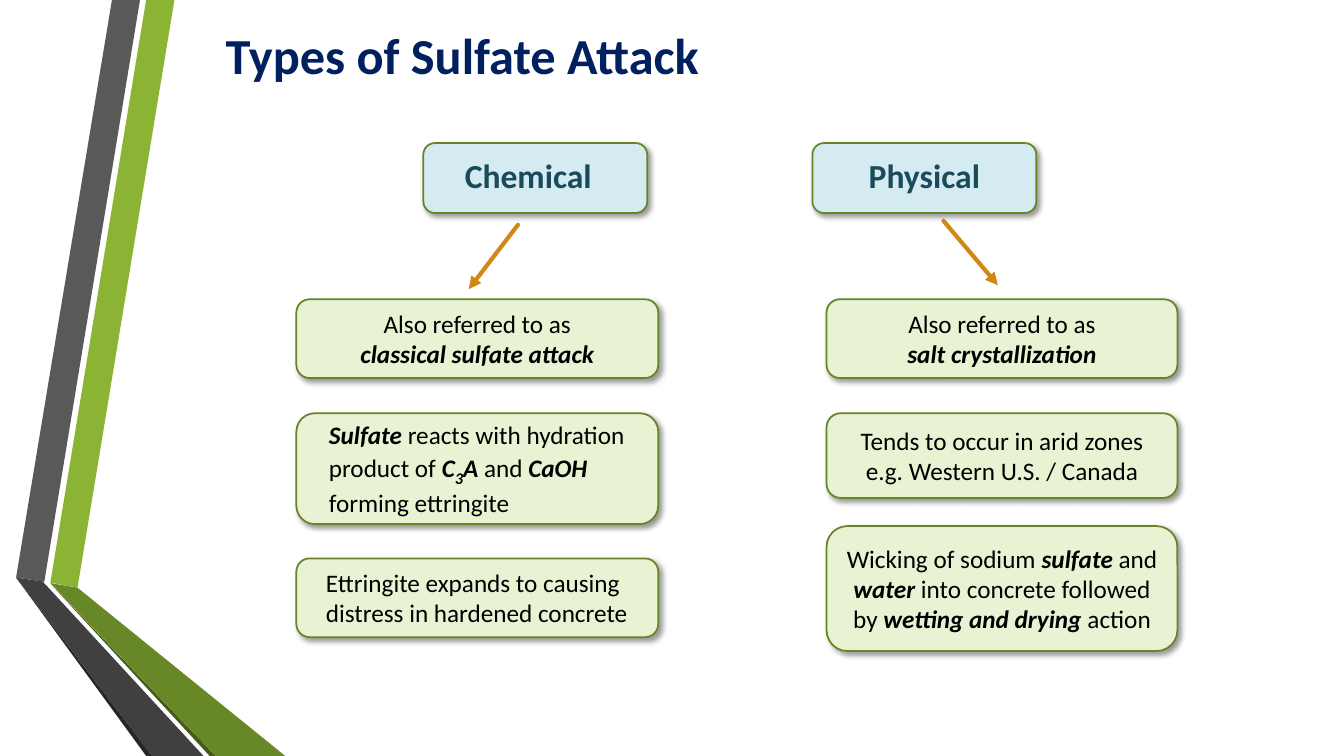
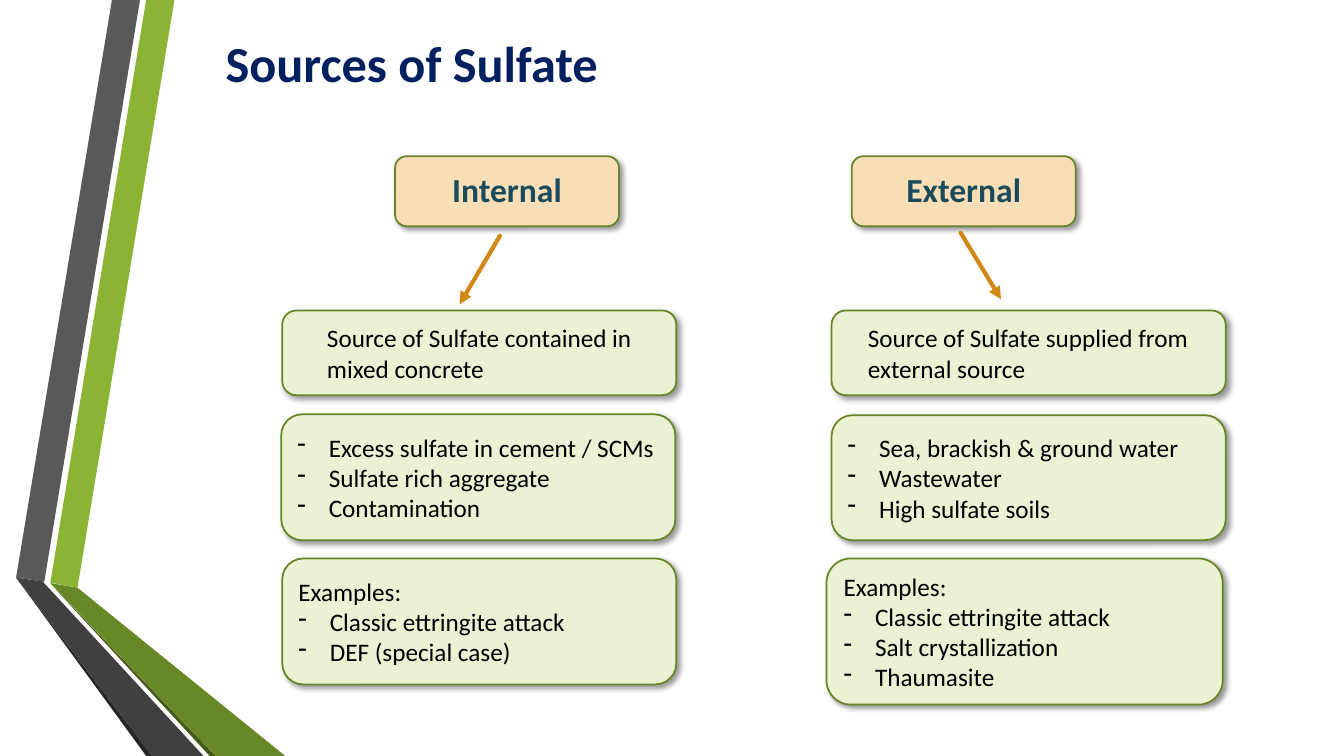
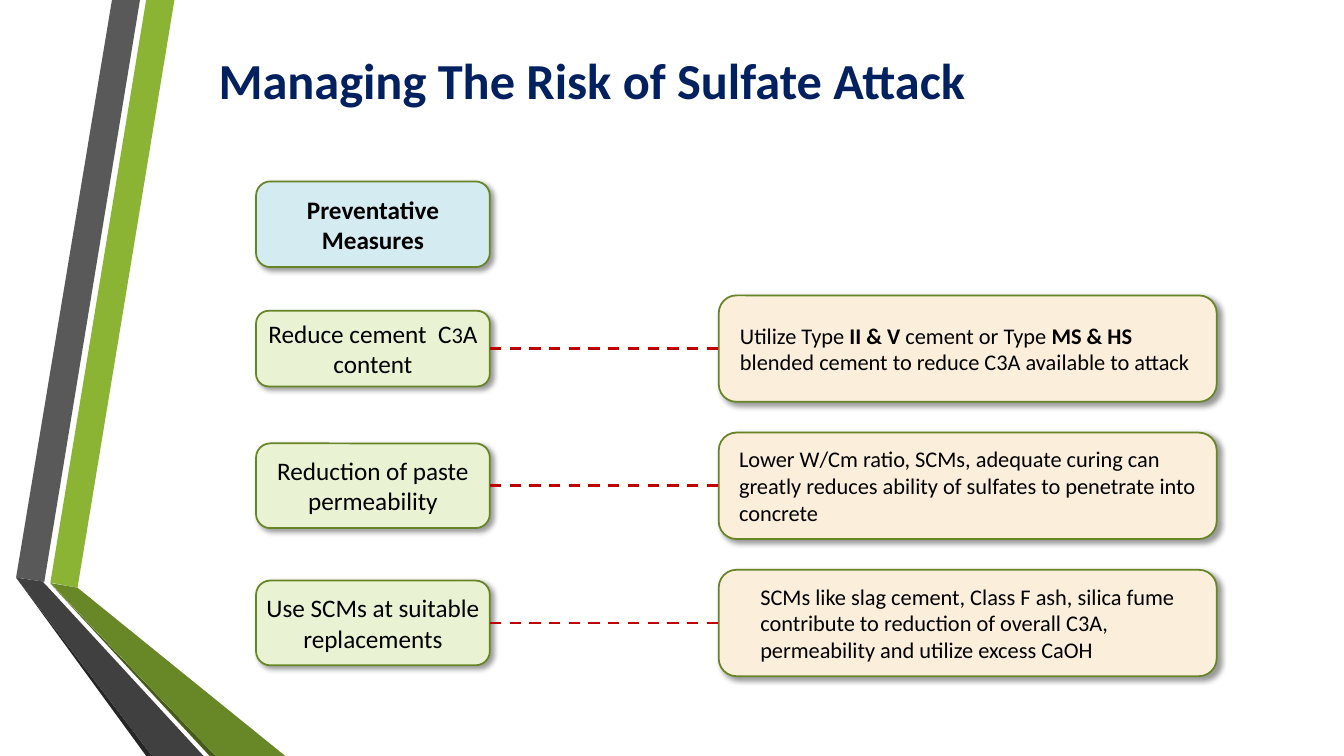
from lxml.etree import SubElement
from pptx import Presentation
from pptx.dml.color import RGBColor
from pptx.enum.dml import MSO_LINE
from pptx.enum.shapes import MSO_CONNECTOR, MSO_SHAPE
from pptx.enum.text import MSO_ANCHOR, PP_ALIGN
from pptx.oxml.ns import qn
from pptx.util import Pt

FONT = "Calibri"
NAVY, TEAL, BLACK = "002060", "1B4A5A", "000000"
GREEN, BLUE, PEACH, CREAM = "E9F3D4", "D4EBF2", "F7DEB7", "FBEEDB"
OUTLINE, ORANGE, RED = "678526", "D18817", "C00000"
LEFT, CENTER = PP_ALIGN.LEFT, PP_ALIGN.CENTER
STRONG = {"bold": True, "italic": True}
BOLD = {"bold": True}

BANDS = [
    ("8BB434", [(36, 416.2), (55.4, 419.8), (124.6, 0), (104.4, 0)]),
    ("595959", [(100, 0), (80, 0), (11.5, 412.6), (31.7, 415.5)]),
    ("262626", [(11.5, 412.6), (104.4, 540), (108.7, 540)]),
    ("465A1A", [(36, 416.9), (149.8, 540), (154.1, 540)]),
    ("688727", [(36, 416.5), (154.1, 540), (203.8, 540), (55.4, 419.8)]),
    ("404040", [(145.4, 540), (34.6, 419.8), (31, 416), (31.7, 415.5),
                (11.5, 412.6), (108.7, 540)]),
]


def rgb(value):
    return RGBColor.from_string(value)


def add_run(p, text, size, color, bold=False, italic=False, baseline=None):
    r = p.add_run()
    r.text = text
    r.font.name = FONT
    r.font.size = Pt(size)
    r.font.color.rgb = rgb(color)
    r.font.bold = bold
    r.font.italic = italic
    if baseline:
        r.font._element.set("baseline", str(baseline))


def add_bullet(p):
    pPr = p._p.get_or_add_pPr()
    pPr.set("marL", str(Pt(22.5)))
    pPr.set("indent", str(Pt(-22.5)))
    SubElement(pPr, qn("a:buChar"), char="-")


def write(sp, paragraphs, size=18, color=BLACK, bold=False, align=LEFT,
          inset=(7.2, 3.6, 7.2, 3.6), spacing=None):
    tf = sp.text_frame
    tf.word_wrap = True
    tf.vertical_anchor = MSO_ANCHOR.MIDDLE
    tf.margin_left, tf.margin_top, tf.margin_right, tf.margin_bottom = map(Pt, inset)
    for i, runs in enumerate(paragraphs):
        p = tf.add_paragraph() if i else tf.paragraphs[0]
        p.alignment = align
        if spacing:
            p.line_spacing = spacing
        if isinstance(runs, str):
            if runs.startswith("- "):
                add_bullet(p)
            runs = [runs.removeprefix("- ")]
        for run in runs:
            text, style = (run, {}) if isinstance(run, str) else run
            add_run(p, text, **{"size": size, "color": color, "bold": bold, **style})


def add_shadow(sp):
    sp.shadow.inherit = False
    effects = sp._element.spPr.find(qn("a:effectLst"))
    shadow = SubElement(effects, qn("a:outerShdw"), blurRad=str(Pt(4)), dist=str(Pt(3)),
                        dir="2700000", algn="tl", rotWithShape="0")
    black = SubElement(shadow, qn("a:srgbClr"), val=BLACK)
    SubElement(black, qn("a:alpha"), val="40000")


def add_card(s, x, y, w, h, paragraphs, fill=GREEN, **fmt):
    sp = s.shapes.add_shape(MSO_SHAPE.ROUNDED_RECTANGLE, Pt(x), Pt(y), Pt(w), Pt(h))
    sp.fill.solid()
    sp.fill.fore_color.rgb = rgb(fill)
    sp.line.color.rgb = rgb(OUTLINE)
    sp.line.width = Pt(1.25)
    add_shadow(sp)
    write(sp, paragraphs, **fmt)
    return sp


def add_header(s, x, y, text, fill, right=0):
    add_card(s, x, y, 160, 50, [text], fill, size=24, color=TEAL, bold=True,
             align=CENTER, inset=(0, 0, right, 0), spacing=0.9)


def add_line(s, x1, y1, x2, y2, color, width):
    line = s.shapes.add_connector(MSO_CONNECTOR.STRAIGHT, Pt(x1), Pt(y1), Pt(x2), Pt(y2))
    line.line.color.rgb = rgb(color)
    line.line.width = Pt(width)
    SubElement(line._element.spPr, qn("a:effectLst"))
    return line


def add_arrow(s, x1, y1, x2, y2):
    ln = add_line(s, x1, y1, x2, y2, ORANGE, 3).line._get_or_add_ln()
    ln.set("cap", "rnd")
    SubElement(ln, qn("a:tailEnd"), type="triangle")


def join_dashed(s, start, end):
    line = add_line(s, 0, 0, 0, 0, RED, 2)
    line.line.dash_style = MSO_LINE.DASH
    line.begin_connect(start, 3)
    line.end_connect(end, 1)


def add_bands(s):
    for color, points in BANDS:
        first, *rest = [(Pt(x), Pt(y)) for x, y in points]
        builder = s.shapes.build_freeform(*first)
        builder.add_line_segments(rest)
        sp = builder.convert_to_shape()
        sp.fill.solid()
        sp.fill.fore_color.rgb = rgb(color)
        sp.line.fill.background()
        sp.shadow.inherit = False


def add_slide(prs, title, x, y, w, h):
    s = prs.slides.add_slide(prs.slide_layouts[6])
    add_bands(s)
    box = s.shapes.add_textbox(Pt(x), Pt(y), Pt(w), Pt(h))
    write(box, [title], size=36, color=NAVY, bold=True)
    return s


def attack_types(prs):
    s = add_slide(prs, "Types of Sulfate Attack", 154, 8.6, 724, 60.5)
    add_header(s, 302.4, 102.2, "Chemical", BLUE, right=10)
    add_header(s, 580.3, 102.2, "Physical", BLUE)
    add_arrow(s, 370, 160.6, 334.8, 206.6)
    add_arrow(s, 673.9, 157.7, 712.8, 203.8)

    x, w = 211.7, 258.5
    flush = {"align": CENTER, "inset": (0, 0, 0, 0)}
    add_card(s, x, 213.8, w, 56.2,
             ["Also referred to as", [("classical sulfate attack", STRONG)]], **flush)
    add_card(s, x, 295.2, w, 79.2,
             [[("Sulfate", STRONG), " reacts with hydration product of ", ("C", STRONG),
               ("3", {**STRONG, "size": 20, "baseline": -25000}), ("A", STRONG),
               " and ", ("CaOH", STRONG), " forming ettringite"]],
             inset=(19.4, 3.6, 7.2, 3.6))
    add_card(s, x, 398.9, w, 56.2,
             ["Ettringite expands to causing distress in hardened concrete"],
             inset=(18.4, 3.6, 7.2, 3.6))

    x, w = 590.4, 250.6
    add_card(s, x, 213.8, w, 56.2,
             ["Also referred to as", [("salt crystallization", STRONG)]], **flush)
    add_card(s, x, 295.2, w, 60.5,
             ["Tends to occur in arid zones", "e.g. Western U.S. / Canada"], align=CENTER)
    add_card(s, x, 375.8, w, 89.3,
             [["Wicking of sodium ", ("sulfate", STRONG), " and ", ("water", STRONG),
               " into concrete followed by ", ("wetting and drying ", STRONG), "action"]],
             align=CENTER)


def sulfate_sources(prs):
    s = add_slide(prs, "Sources of Sulfate", 154, 14.4, 724, 60.5)
    add_header(s, 282.2, 111.6, "Internal", PEACH)
    add_header(s, 608.4, 111.6, "External", PEACH)
    add_arrow(s, 357.1, 168.5, 328.3, 217.4)
    add_arrow(s, 686.2, 166.3, 715, 213.8)

    w = 281.5
    add_card(s, 201.6, 221.8, w, 60.5, ["Source of Sulfate contained in mixed concrete"],
             inset=(29, 3.6, 7.2, 3.6))
    add_card(s, 200.9, 295.9, w, 90,
             ["- Excess sulfate in cement / SCMs", "- Sulfate rich aggregate",
              "- Contamination"])
    add_card(s, 201.6, 398.9, w, 90,
             ["Examples:", "- Classic ettringite attack", "- DEF (special case)"])

    add_card(s, 594, 221.8, w, 60.5, ["Source of Sulfate supplied from external source"],
             inset=(23, 3.6, 7.2, 3.6))
    add_card(s, 594, 296.6, w, 89.3,
             ["- Sea, brackish & ground water", "- Wastewater", "- High sulfate soils"])
    add_card(s, 590.4, 398.9, 283, 104.4,
             ["Examples:", "- Classic ettringite attack", "- Salt crystallization",
              "- Thaumasite"])


def risk_management(prs):
    s = add_slide(prs, "Managing The Risk of Sulfate Attack", 149, 18.7, 627, 76.3)
    x, w = 182.9, 167
    add_card(s, x, 129.6, w, 61.2, ["Preventative Measures"], BLUE, bold=True, align=CENTER)
    rows = [
        (54, ["Reduce cement  C", ("3", {"size": 16}), "A content"], 11.5,
         ["Utilize Type", (" II & V ", BOLD), "cement or Type ", ("MS & HS ", BOLD),
          "blended cement to reduce C3A available to attack"]),
        (60.5, "Reduction of paste permeability", 10.8,
         "Lower W/Cm ratio, SCMs, adequate curing can greatly reduces ability of "
         "sulfates to penetrate into concrete"),
        (60.5, "Use SCMs at suitable replacements", 26,
         "SCMs like slag cement, Class F ash, silica fume contribute to reduction of "
         "overall C3A, permeability and utilize excess CaOH"),
    ]
    detail_h = 76
    for i, (h, measure, indent, detail) in enumerate(rows):
        middle = 249 + 98 * i
        start = add_card(s, x, middle - h / 2, w, h, [measure], align=CENTER,
                         inset=(0, 0, 0, 0))
        end = add_card(s, 513.4, middle - detail_h / 2, 355.7, detail_h, [detail], CREAM,
                       size=16, inset=(indent, 3.6, 7.2, 3.6))
        join_dashed(s, start, end)


def main():
    prs = Presentation()
    prs.slide_width, prs.slide_height = Pt(960), Pt(540)
    attack_types(prs)
    sulfate_sources(prs)
    risk_management(prs)
    prs.save("out.pptx")


if __name__ == "__main__":
    main()
